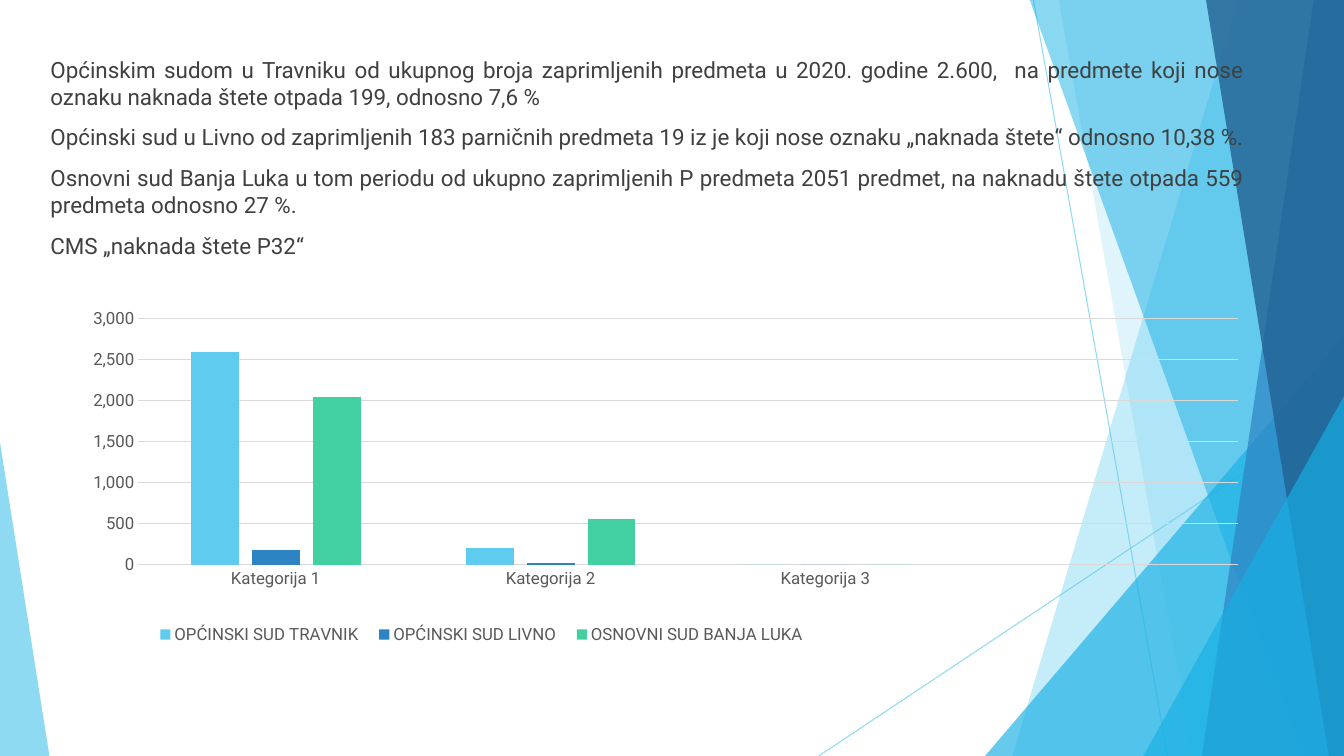
from lxml import etree
from pptx import Presentation
from pptx.chart.data import CategoryChartData
from pptx.dml.color import RGBColor
from pptx.enum import chart as chart_enum, shapes, text
from pptx.oxml import parse_xml
from pptx.oxml.ns import nsdecls, qn
from pptx.util import Inches, Pt

FONT = "Roboto"
SKY = RGBColor(0x5F, 0xCB, 0xEF)
CYAN = RGBColor(0x17, 0xB0, 0xE4)
BLUE = RGBColor(0x2E, 0x83, 0xC3)
NAVY = RGBColor(0x22, 0x62, 0x92)
GREEN = RGBColor(0x42, 0xD0, 0xA2)
TEXT = RGBColor(0x40, 0x40, 0x40)
LABEL = RGBColor(0x59, 0x59, 0x59)
GRID = RGBColor(0xD9, 0xD9, 0xD9)

WIDTH, HEIGHT, TOP = 13.33, 7.5, -0.01

PARAGRAPHS = [
    "Općinskim sudom u Travniku od ukupnog broja zaprimljenih predmeta u 2020. godine 2.600,  "
    "na predmete koji nose oznaku naknada štete otpada 199, odnosno 7,6 %",
    "Općinski sud u Livno od zaprimljenih 183 parničnih predmeta 19 iz je koji nose oznaku "
    "„naknada štete“ odnosno 10,38 %. ",
    "Osnovni sud Banja Luka u tom periodu od ukupno zaprimljenih P predmeta 2051 predmet, "
    "na naknadu štete otpada 559 predmeta odnosno 27 %.",
    "CMS „naknada štete P32“",
]
CATEGORIES = ["Kategorija 1", "Kategorija 2", "Kategorija 3", ""]
SERIES = [
    ("OPĆINSKI SUD TRAVNIK", (2600, 200, 0, None), SKY),
    ("OPĆINSKI SUD LIVNO", (180, 20, 0, None), BLUE),
    ("OSNOVNI SUD BANJA LUKA", (2050, 560, 0, None), GREEN),
]


def set_opacity(fill_owner, percent):
    color = fill_owner.find(".//" + qn("a:srgbClr"))
    etree.SubElement(color, qn("a:alpha"), val=str(percent * 1000))


def paint(shape, color, opacity):
    shape.shadow.inherit = False
    shape.fill.solid()
    shape.fill.fore_color.rgb = color
    set_opacity(shape.fill._xPr, opacity)
    shape.line.fill.background()


def add_thin_line(slide, start, end):
    line = slide.shapes.add_connector(
        shapes.MSO_CONNECTOR.STRAIGHT, *map(Inches, start + end))
    line.line.color.rgb = SKY
    line.line.width = Pt(0.75)
    properties = line._element.spPr
    set_opacity(properties, 70)
    etree.SubElement(properties, qn("a:effectLst"))


def add_band(slide, top_left, bottom_left, color, opacity):
    """Band running from a slanted left edge to the right slide edge."""
    builder = slide.shapes.build_freeform(Inches(top_left), Inches(TOP))
    corners = [(WIDTH, TOP), (WIDTH, HEIGHT), (bottom_left, HEIGHT)]
    builder.add_line_segments([(Inches(x), Inches(y)) for x, y in corners], close=True)
    paint(builder.convert_to_shape(), color, opacity)


def add_triangle(slide, left, top, width, apex, color, opacity):
    """Triangle standing on the bottom slide edge."""
    shape = slide.shapes.add_shape(
        shapes.MSO_SHAPE.ISOSCELES_TRIANGLE,
        *map(Inches, (left, top, width, HEIGHT - top)))
    shape.adjustments[0] = apex
    paint(shape, color, opacity)


def add_background(slide):
    add_thin_line(slide, (10.25, 0), (11.58, HEIGHT))
    add_thin_line(slide, (WIDTH, 4.03), (8.12, HEIGHT))
    add_band(slide, 12.28, 10.04, SKY, 36)
    add_band(slide, 10.5, 11.83, SKY, 20)
    add_triangle(slide, 9.77, 3.33, 3.56, 1, CYAN, 66)
    add_band(slide, 10.21, 12.91, CYAN, 50)
    add_band(slide, 13.03, 11.92, BLUE, 70)
    add_band(slide, 11.96, 13.18, NAVY, 80)
    add_triangle(slide, 11.34, 3.93, 1.99, 1, CYAN, 66)
    add_triangle(slide, 0, 4.39, 0.49, 0, SKY, 70)


def fill_body(slide, body):
    # Bring the text in front of the background
    slide.shapes._spTree.append(body._element)
    body.left, body.top, body.width, body.height = map(Inches, (0.4, 1.08, 12.04, 1.54))
    frame = body.text_frame
    frame.text = "\n".join(PARAGRAPHS)
    frame.word_wrap = True
    frame.auto_size = text.MSO_AUTO_SIZE.NONE
    frame.vertical_anchor = text.MSO_ANCHOR.BOTTOM
    for paragraph in frame.paragraphs:
        paragraph.alignment = text.PP_ALIGN.JUSTIFY
        paragraph.space_before = Pt(10)
        set_font(paragraph.font, 16, TEXT)
        properties = paragraph._p.get_or_add_pPr()
        properties.set("marL", "0")
        properties.set("indent", "0")
        bullet = parse_xml(f"<a:buNone {nsdecls('a')}/>")
        properties.find(qn("a:defRPr")).addprevious(bullet)


def set_font(font, size, color):
    font.name = FONT
    font.size = Pt(size)
    font.color.rgb = color


def manual_layout(x, y, width, height, inner=False):
    target = '<c:layoutTarget val="inner"/>' if inner else ""
    return parse_xml(
        f'<c:layout {nsdecls("c")}><c:manualLayout>{target}'
        '<c:xMode val="edge"/><c:yMode val="edge"/>'
        f'<c:x val="{x}"/><c:y val="{y}"/><c:w val="{width}"/><c:h val="{height}"/>'
        '</c:manualLayout></c:layout>')


def replace_layout(parent, layout, position):
    for old in parent.findall(qn("c:layout")):
        parent.remove(old)
    parent.insert(position, layout)


def style_axis(axis):
    axis.major_tick_mark = axis.minor_tick_mark = chart_enum.XL_TICK_MARK.NONE
    set_font(axis.tick_labels.font, 12, LABEL)


def add_court_chart(slide):
    data = CategoryChartData(number_format="#,##0")
    data.categories = CATEGORIES
    for name, values, _ in SERIES:
        data.add_series(name, values)
    chart = slide.shapes.add_chart(
        chart_enum.XL_CHART_TYPE.COLUMN_CLUSTERED,
        *map(Inches, (0.74, 2.79, 11.7, 3.81)), data).chart
    chart.has_title = False
    set_font(chart.font, 10, LABEL)

    # Columns
    plot = chart.plots[0]
    plot.gap_width, plot.overlap, plot.vary_by_categories = 219, -27, False
    for series, (_, _, color) in zip(plot.series, SERIES):
        series.format.fill.solid()
        series.format.fill.fore_color.rgb = color
    plot_area = chart._chartSpace.chart.plotArea
    replace_layout(plot_area, manual_layout(0.054, 0.098, 0.932, 0.641, inner=True), 0)

    # Axes
    categories, values = chart.category_axis, chart.value_axis
    style_axis(categories)
    style_axis(values)
    values.minimum_scale, values.maximum_scale, values.major_unit = 0, 3000, 500
    values.format.line.fill.background()
    for line in (categories.format.line, values.major_gridlines.format.line):
        line.color.rgb = GRID
        line.width = Pt(0.75)

    # Legend
    chart.has_legend = True
    legend = chart.legend
    legend.position = chart_enum.XL_LEGEND_POSITION.BOTTOM
    legend.include_in_layout = False
    set_font(legend.font, 12, LABEL)
    replace_layout(legend._element, manual_layout(0.06, 0.88, 0.57, 0.08), 1)


def main():
    presentation = Presentation()
    presentation.slide_width, presentation.slide_height = Inches(WIDTH), Inches(HEIGHT)
    slide = presentation.slides.add_slide(presentation.slide_layouts[1])
    title, body = slide.placeholders
    title._element.getparent().remove(title._element)
    add_background(slide)
    fill_body(slide, body)
    add_court_chart(slide)
    presentation.save("out.pptx")


if __name__ == "__main__":
    main()
